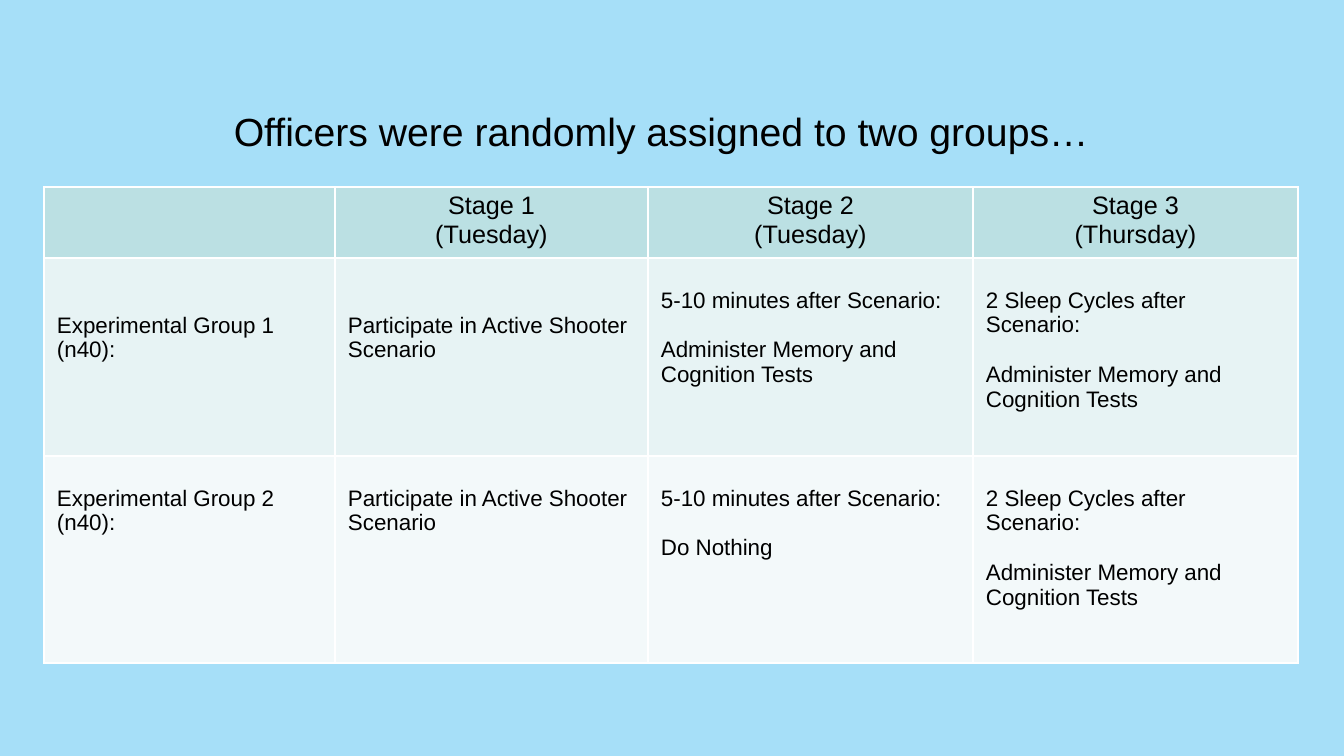
from lxml.etree import SubElement
from pptx import Presentation
from pptx.dml.color import RGBColor
from pptx.enum.text import MSO_ANCHOR, PP_ALIGN
from pptx.oxml.ns import qn
from pptx.util import Emu, Pt

HEADINGS = [
    [],
    ["Stage 1", "(Tuesday)"],
    ["Stage 2", "(Tuesday)"],
    ["Stage 3", "(Thursday)"],
]
SCENARIO = "Participate in Active Shooter Scenario"
TESTS = "Administer Memory and Cognition Tests"
SHORT_DELAY = "5-10 minutes after Scenario:"
LONG_DELAY = "2 Sleep Cycles after Scenario:"
GROUPS = [
    [["Experimental Group 1 (n40):"], [SCENARIO], [SHORT_DELAY, TESTS], [LONG_DELAY, TESTS]],
    [["Experimental Group 2 (n40):"], [SCENARIO], [SHORT_DELAY, "Do Nothing"], [LONG_DELAY, TESTS]],
]
COLUMNS = [291, 313, 325, 325]
ROWS = [71, 198, 207]
FILLS = ["BBE0E3", "E7F3F4", "F3F9FA"]
LINE = 25


def px(length):
    return Emu(round(length * 914400 / 100.8))


def color(value):
    return RGBColor.from_string(value)


class Page:
    font_name = "Arial"
    ink = "000000"
    rule = "FFFFFF"

    def __init__(self, deck, background):
        self.slide = deck.slides.add_slide(deck.slide_layouts[5])
        fill = self.slide.background.fill
        fill.solid()
        fill.fore_color.rgb = color(background)

    def text(self, frame, lines, size, alignment, gap=0):
        for index, line in enumerate(lines or [""]):
            paragraph = frame.add_paragraph() if index else frame.paragraphs[0]
            paragraph.text = line
            paragraph.alignment = alignment
            if index and gap:
                paragraph.space_before = px(gap)
            paragraph.font.color.rgb = color(self.ink)
            for name, value in {"name": self.font_name, "size": Pt(size), "bold": False}.items():
                setattr(paragraph.font, name, value)

    def title(self, text, left, top, width, height):
        box = self.slide.shapes.title
        for name, value in {"left": left, "top": top, "width": width, "height": height}.items():
            setattr(box, name, px(value))
        box.text_frame.word_wrap = True
        box.text_frame.vertical_anchor = MSO_ANCHOR.MIDDLE
        self.text(box.text_frame, [text], 28, PP_ALIGN.CENTER)

    def table(self, left, top, columns, rows):
        frame = self.slide.shapes.add_table(
            len(rows), len(columns), px(left), px(top), px(sum(columns)), px(sum(rows)))
        table = frame.table
        for name in ("first_row", "horz_banding"):
            setattr(table, name, False)
        for column, width in zip(table.columns, columns):
            column.width = px(width)
        for row, height in zip(table.rows, rows):
            row.height = px(height)
        return table

    def cell(self, cell, lines, fill, size, alignment, lead=0, gap=0):
        margins = {"left": 13, "right": 13, "top": 5 + lead, "bottom": 5}
        for side, value in margins.items():
            setattr(cell, f"margin_{side}", px(value))
        self.borders(cell)
        cell.fill.solid()
        cell.fill.fore_color.rgb = color(fill)
        self.text(cell.text_frame, lines, size, alignment, gap)

    def borders(self, cell):
        properties = cell._tc.get_or_add_tcPr()
        for side in "LRTB":
            line = SubElement(properties, qn(f"a:ln{side}"), w=str(Pt(1)))
            solid = SubElement(line, qn("a:solidFill"))
            SubElement(solid, qn("a:srgbClr"), val=self.rule)


def main():
    deck = Presentation()
    deck.slide_width = px(1344)
    deck.slide_height = px(756)
    page = Page(deck, "A6DFF8")
    page.title("Officers were randomly assigned to two groups…", 56, 68, 1210, 126)
    table = page.table(44, 187, COLUMNS, ROWS)
    for column, lines in enumerate(HEADINGS):
        page.cell(table.cell(0, column), lines, FILLS[0], 18, PP_ALIGN.CENTER)
    for row, group in enumerate(GROUPS, 1):
        for column, lines in enumerate(group):
            lead = 2 * LINE if row == 1 and column < 2 else LINE
            page.cell(table.cell(row, column), lines, FILLS[row], 16, PP_ALIGN.LEFT, lead, LINE)
    deck.save("out.pptx")


if __name__ == "__main__":
    main()
